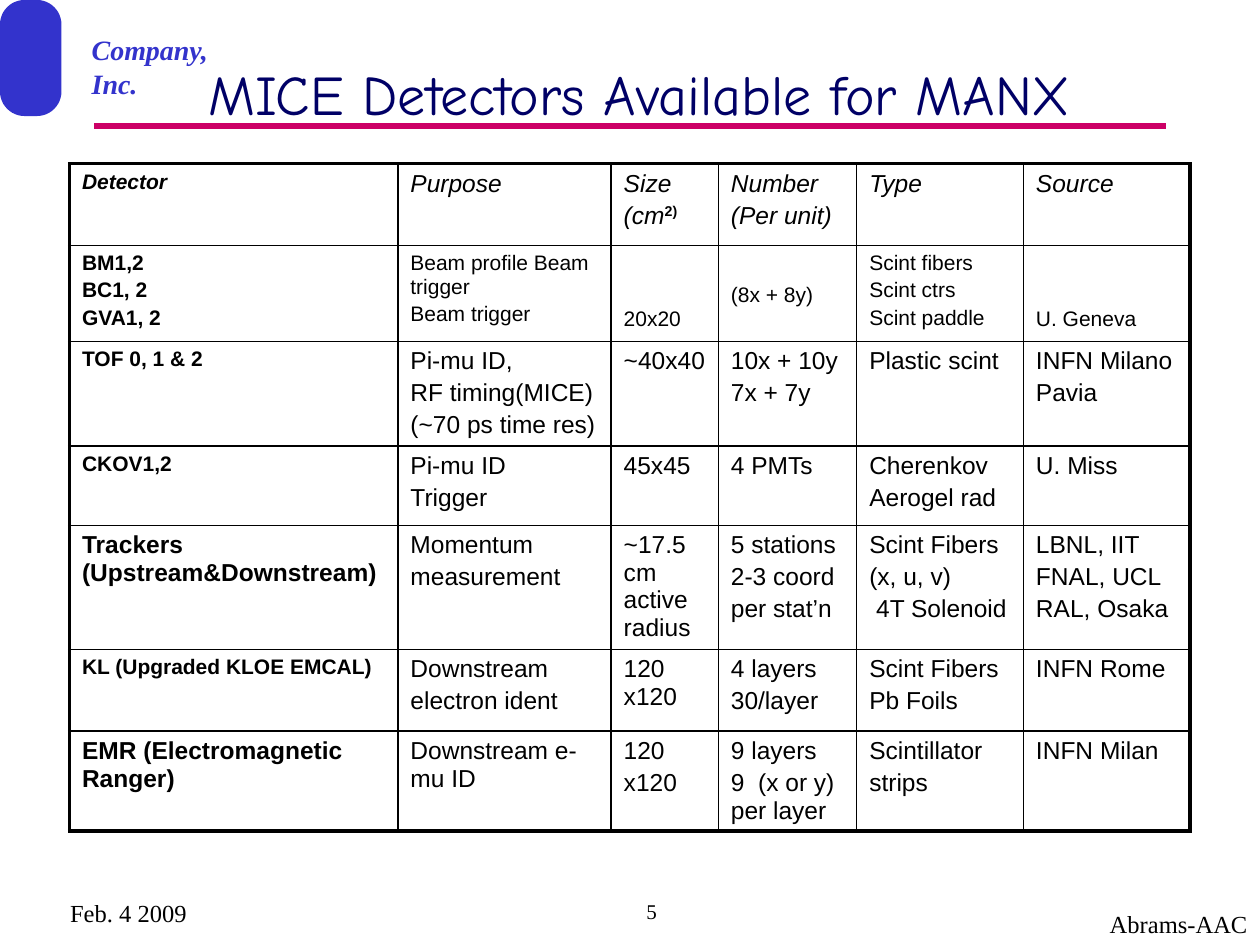
from lxml import etree
from pptx import Presentation
from pptx import util as u
from pptx.dml.color import RGBColor
from pptx.enum import shapes, text
from pptx.oxml.ns import qn

# Content: each cell is a list of paragraphs
TITLE = "MICE Detectors Available for MANX"
COMPANY = "Company, Inc."
HEADER = [["Detector"], ["Purpose"], ["Size", "(cm"], ["Number", "(Per unit)"], ["Type"], ["Source"]]
DETECTORS = [
    [["BM1,2", "BC1, 2", "GVA1, 2"], ["Beam profile Beam trigger", "Beam trigger"], ["20x20"],
     ["(8x + 8y)"], ["Scint fibers", "Scint ctrs", "Scint paddle"], ["U. Geneva"]],
    [["TOF 0, 1 & 2"], ["Pi-mu ID,", "RF timing(MICE)", "(~70 ps time res)"], ["~40x40"],
     ["10x + 10y", "7x + 7y"], ["Plastic scint"], ["INFN Milano", "Pavia"]],
    [["CKOV1,2"], ["Pi-mu ID", "Trigger"], ["45x45"],
     ["4 PMTs"], ["Cherenkov", "Aerogel rad"], ["U. Miss"]],
    [["Trackers (Upstream&Downstream)"], ["Momentum", "measurement"], ["~17.5 cm active radius"],
     ["5 stations", "2-3 coord", "per stat’n"], ["Scint Fibers", "(x, u, v)", " 4T Solenoid"],
     ["LBNL, IIT", "FNAL, UCL", "RAL, Osaka"]],
    [["KL (Upgraded KLOE EMCAL)"], ["Downstream", "electron ident"], ["120 x120"],
     ["4 layers", "30/layer"], ["Scint Fibers", "Pb Foils"], ["INFN Rome"]],
    [["EMR (Electromagnetic Ranger)"], ["Downstream e-mu ID"], ["120", "x120"],
     ["9 layers", "9  (x or y) per layer"], ["Scintillator", "strips"], ["INFN Milan"]],
]
ROWS = [HEADER] + DETECTORS
COLUMN_WIDTHS = [6.62, 4.3, 2.16, 2.79, 3.36, 3.36]
ROW_HEIGHTS = [1.65, 1.93, 2.11, 1.6, 2.48, 1.65, 2.01]
SMALL_ROW = 1
LARGE_NAME_ROWS = (4, 6)
# Entries that line up with a lower line of their row: (row, column) -> top margin
TOP_MARGINS = {(1, 2): 1.24, (1, 3): 0.77, (1, 5): 1.24}
# Text, left, top, width, height, alignment, size
FOOTERS = [
    ("Feb. 4 2009", 0, 17.98, 5.18, 1.07, text.PP_ALIGN.CENTER, 14),
    ("5", 6.15, 17.98, 13.97, 1.07, text.PP_ALIGN.CENTER, 12),
    ("Abrams-AAC", 20.12, 18.21, 5.28, 0.84, text.PP_ALIGN.RIGHT, 14),
]


def color(value):
    return RGBColor.from_string(value)


def set_font(font, name, size, value, bold=False, italic=False):
    font.name, font.size, font.bold, font.italic = name, u.Pt(size), bold, italic
    font.color.rgb = color(value)


def add_text(slide, words, left, top, width, height, align, size, value="000000", strong=False):
    box = slide.shapes.add_textbox(u.Cm(left), u.Cm(top), u.Cm(width), u.Cm(height))
    box.text_frame.word_wrap = True
    paragraph = box.text_frame.paragraphs[0]
    paragraph.text, paragraph.alignment = words, align
    set_font(paragraph.font, "Times New Roman", size, value, strong, strong)


def set_borders(cell, row, column):
    outer = {"L": column == 0, "R": column == len(COLUMN_WIDTHS) - 1,
             "T": row == 0, "B": row == len(ROWS) - 1}
    properties = cell._tc.get_or_add_tcPr()
    for side, is_outer in outer.items():
        line = etree.SubElement(properties, qn(f"a:ln{side}"), w=str(u.Pt(2.25 if is_outer else 1)))
        fill = etree.SubElement(line, qn("a:solidFill"))
        etree.SubElement(fill, qn("a:srgbClr"), val="000000")


def fill_cell(cell, lines, row, column):
    set_borders(cell, row, column)
    cell.fill.background()
    cell.margin_bottom = 0
    if (row, column) in TOP_MARGINS:
        cell.margin_top = u.Cm(TOP_MARGINS[row, column])
    is_name = column == 0
    small = row == SMALL_ROW or (is_name and row not in LARGE_NAME_ROWS)
    size = 12 if small else 14
    frame = cell.text_frame
    frame.text = "\n".join(lines)
    for index, paragraph in enumerate(frame.paragraphs):
        set_font(paragraph.font, "Arial", size, "000000", is_name, row == 0)
        if index:
            paragraph.space_before = u.Pt(2 if small else 2.4)


def add_detector_table(slide):
    frame = slide.shapes.add_table(len(ROWS), len(COLUMN_WIDTHS), u.Cm(1.4), u.Cm(3.3),
                                   u.Cm(sum(COLUMN_WIDTHS)), u.Cm(sum(ROW_HEIGHTS)))
    table = frame.table
    table.first_row = table.horz_banding = False
    for column, width in zip(table.columns, COLUMN_WIDTHS):
        column.width = u.Cm(width)
    for row, height in zip(table.rows, ROW_HEIGHTS):
        row.height = u.Cm(height)
    for row, cells in enumerate(ROWS):
        for column, lines in enumerate(cells):
            fill_cell(table.cell(row, column), lines, row, column)
    # Raised end of the size unit
    exponent = table.cell(0, 2).text_frame.paragraphs[1].add_run()
    exponent.text = "2)"
    exponent.font.bold, exponent.font.italic = True, False
    exponent.font._element.set("baseline", "30000")


def main():
    presentation = Presentation()
    presentation.slide_width, presentation.slide_height = u.Cm(25.4), u.Cm(19.05)
    slide = presentation.slides.add_slide(presentation.slide_layouts[5])

    # Rule under the title
    rule = slide.shapes.add_connector(shapes.MSO_CONNECTOR.STRAIGHT,
                                      u.Cm(1.9), u.Cm(2.54), u.Cm(23.5), u.Cm(2.54))
    rule.line.color.rgb, rule.line.width = color("CC0066"), u.Pt(3)
    etree.SubElement(rule._element.spPr, qn("a:effectLst"))

    # Corner mark and company name
    mark = slide.shapes.add_shape(shapes.MSO_SHAPE.ROUNDED_RECTANGLE, 0, 0, u.Cm(1.24), u.Cm(2.34))
    mark.adjustments[0] = 0.4
    mark.shadow.inherit = False
    mark.fill.solid()
    mark.fill.fore_color.rgb = color("3333CC")
    mark.line.fill.background()
    add_text(slide, COMPANY, 1.6, 0.53, 3.71, 0.94, text.PP_ALIGN.LEFT, 16, "3333CC", True)

    # Title
    title = slide.shapes.title
    title.left, title.top, title.width, title.height = (u.Cm(n) for n in (1.47, 0.64, 22.86, 2.49))
    title.text_frame.text = TITLE
    title.text_frame.vertical_anchor = text.MSO_ANCHOR.MIDDLE
    paragraph = title.text_frame.paragraphs[0]
    paragraph.alignment = text.PP_ALIGN.CENTER
    set_font(paragraph.font, "Comic Neue", 32, "000066")

    add_detector_table(slide)

    # Footer
    for footer in FOOTERS:
        add_text(slide, *footer)

    presentation.save("out.pptx")


if __name__ == "__main__":
    main()
